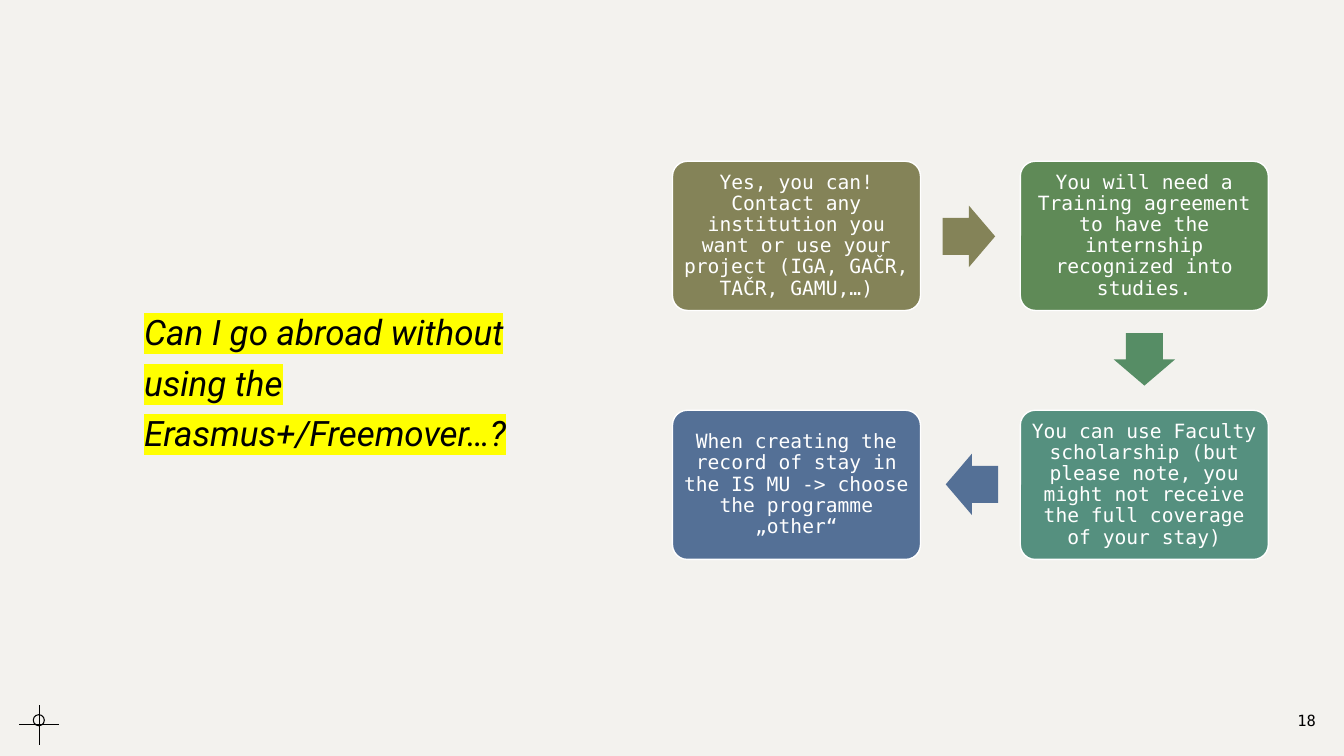
from dataclasses import dataclass

from lxml import etree
from pptx import Presentation
from pptx import util as u
from pptx.dml.color import RGBColor
from pptx.enum import shapes, text
from pptx.oxml import ns

PX = 9144  # EMU per px, 100 px to the inch
MONO, ROBOTO = "DejaVu Sans Mono", "Roboto"
COLORS = {
    "paper": "F3F2EE", "ink": "000000", "white": "FFFFFF", "marker": "FFFF00",
    "olive": "848358", "green": "5F8A57", "fern": "568D65",
    "teal": "55907F", "blue": "547096",
}
FLOW_LEFT, FLOW_TOP = 667, 160
COL_PITCH, ROW_PITCH = 345, 247
CARD_W, CARD_H = 246, 148
ARROW_W, ARROW_H = 52, 61
MARK_X, MARK_Y, MARK_ARM = 39, 719, 20


@dataclass
class Card:
    col: int
    row: int
    color: str
    words: str


@dataclass
class Arrow:
    left: int
    top: int
    turn: int
    color: str


CARDS = [
    Card(0, 0, "olive", "Yes, you can!\vContact any institution you want or use "
                        "your project (IGA, GAČR, TAČR, GAMU,…)"),
    Card(1, 0, "green", "You will need a Training agreement to have the "
                        "internship recognized into studies."),
    Card(1, 1, "teal", "You can use Faculty scholarship (but please note, you "
                       "might not receive the full coverage of your stay)"),
    Card(0, 1, "blue", "When creating the record of stay in the IS MU -> choose "
                       "the programme „other“"),
]
ARROWS = [
    Arrow(935, 204, 0, "olive"),
    Arrow(1109, 326, 90, "fern"),
    Arrow(938, 450, 180, "blue"),
]


def px(n: int) -> int:
    return n * PX


def rgb(name: str) -> RGBColor:
    return RGBColor.from_string(COLORS[name])


def write(tf, words: str, font: str, size: int, color: str, align, spacing: float = 1.0):
    """Fill a frame with one middle-anchored paragraph and return it."""
    tf.text = words
    tf.word_wrap = True
    tf.auto_size = text.MSO_AUTO_SIZE.NONE
    tf.vertical_anchor = text.MSO_ANCHOR.MIDDLE
    p = tf.paragraphs[0]
    p.alignment, p.line_spacing = align, spacing
    for r in p.runs:
        r.font.name, r.font.size = font, u.Pt(size)
        r.font.color.rgb = rgb(color)
    return p


def add_preset(s, kind, left: int, top: int, width: int, height: int, fill: str = ""):
    sp = s.shapes.add_shape(kind, px(left), px(top), px(width), px(height))
    sp.shadow.inherit = False
    if fill:
        sp.fill.solid()
        sp.fill.fore_color.rgb = rgb(fill)
    else:
        sp.fill.background()
    return sp


def set_line(sp, color: str, width: float) -> None:
    sp.line.color.rgb = rgb(color)
    sp.line.width = u.Pt(width)


def add_line(s, x1: int, y1: int, x2: int, y2: int) -> None:
    line = s.shapes.add_connector(
        shapes.MSO_CONNECTOR.STRAIGHT, px(x1), px(y1), px(x2), px(y2))
    set_line(line, "ink", 0.75)
    etree.SubElement(line._element.spPr, ns.qn("a:effectLst"))


def add_card(s, card: Card) -> None:
    sp = add_preset(s, shapes.MSO_SHAPE.ROUNDED_RECTANGLE,
                    FLOW_LEFT + card.col * COL_PITCH,
                    FLOW_TOP + card.row * ROW_PITCH, CARD_W, CARD_H, card.color)
    sp.adjustments[0] = 0.1
    set_line(sp, "white", 1)
    tf = sp.text_frame
    tf.margin_left = tf.margin_right = tf.margin_top = tf.margin_bottom = px(6)
    write(tf, card.words, MONO, 14, "white", text.PP_ALIGN.CENTER, 0.9)


def add_arrow(s, arrow: Arrow) -> None:
    sp = add_preset(s, shapes.MSO_SHAPE.RIGHT_ARROW, arrow.left, arrow.top,
                    ARROW_W, ARROW_H, arrow.color)
    sp.adjustments[0], sp.adjustments[1] = 0.6, 0.5
    sp.line.fill.background()
    sp.rotation = arrow.turn


def add_title(s) -> None:
    sp = s.shapes.title
    sp.left, sp.top, sp.width, sp.height = px(133), px(134), px(450), px(482)
    p = write(sp.text_frame, "Can I go abroad without using the Erasmus+/Freemover…?",
              ROBOTO, 25, "ink", text.PP_ALIGN.LEFT, 1.2)
    for r in p.runs:
        r.font.italic = True
        highlight = etree.Element(ns.qn("a:highlight"))
        etree.SubElement(highlight, ns.qn("a:srgbClr"), val=COLORS["marker"])
        r.font._element.find(ns.qn("a:solidFill")).addnext(highlight)


def main() -> None:
    prs = Presentation()
    prs.slide_width, prs.slide_height = px(1333), px(750)
    s = prs.slides.add_slide(prs.slide_layouts[5])
    s.background.fill.solid()
    s.background.fill.fore_color.rgb = rgb("paper")

    # Question
    add_title(s)

    # Corner crosshair
    add_line(s, MARK_X - MARK_ARM, MARK_Y, MARK_X + MARK_ARM, MARK_Y)
    add_line(s, MARK_X, MARK_Y + MARK_ARM, MARK_X, MARK_Y - MARK_ARM)
    ring = add_preset(s, shapes.MSO_SHAPE.OVAL, 33, 709, 11, 11)
    set_line(ring, "ink", 0.75)

    # Page number
    number = s.shapes.add_textbox(px(1193), px(695), px(122), px(40))
    write(number.text_frame, "18", MONO, 11, "ink", text.PP_ALIGN.RIGHT)

    # Answer flow
    for card in CARDS:
        add_card(s, card)
    for arrow in ARROWS:
        add_arrow(s, arrow)

    prs.save("out.pptx")


if __name__ == "__main__":
    main()
